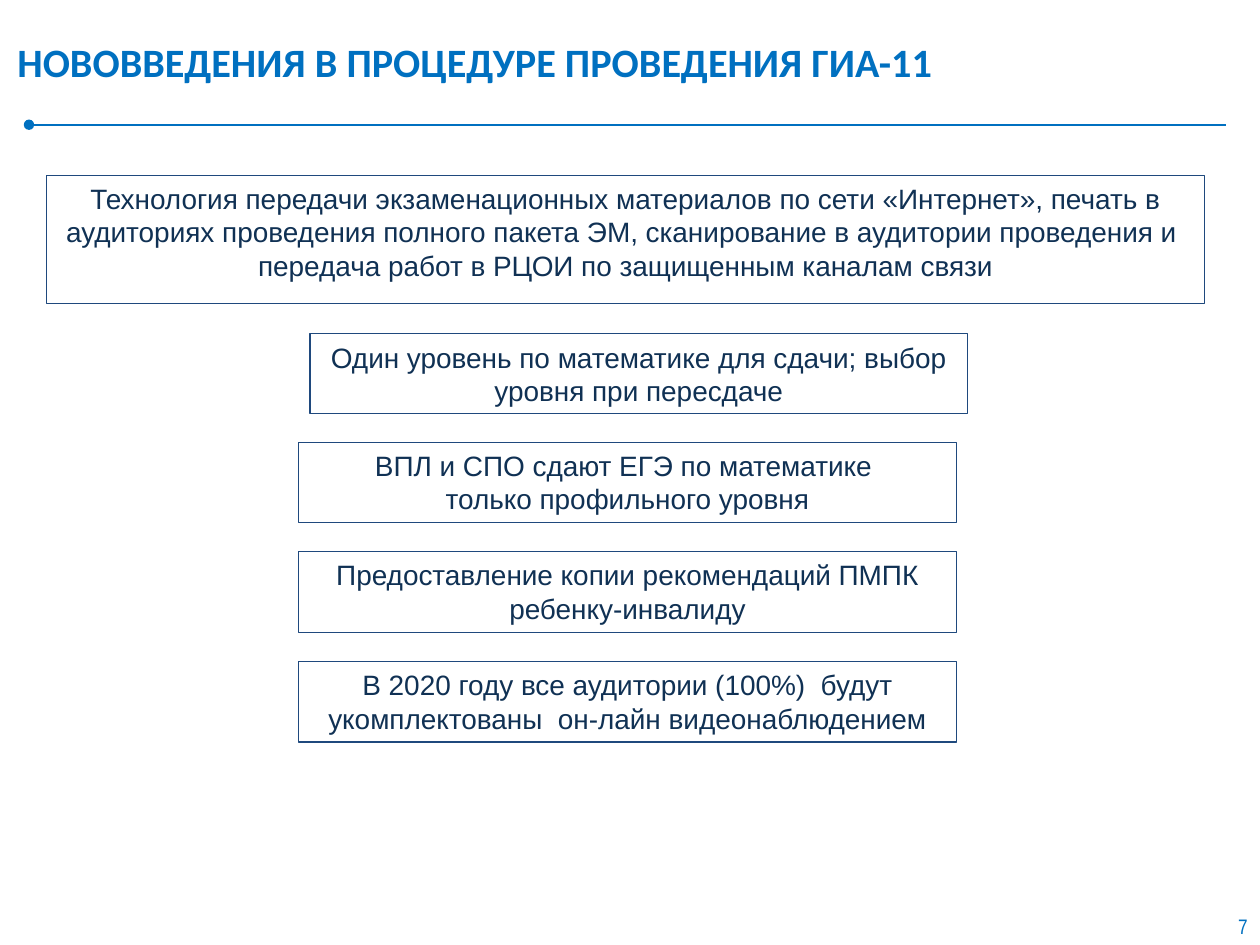
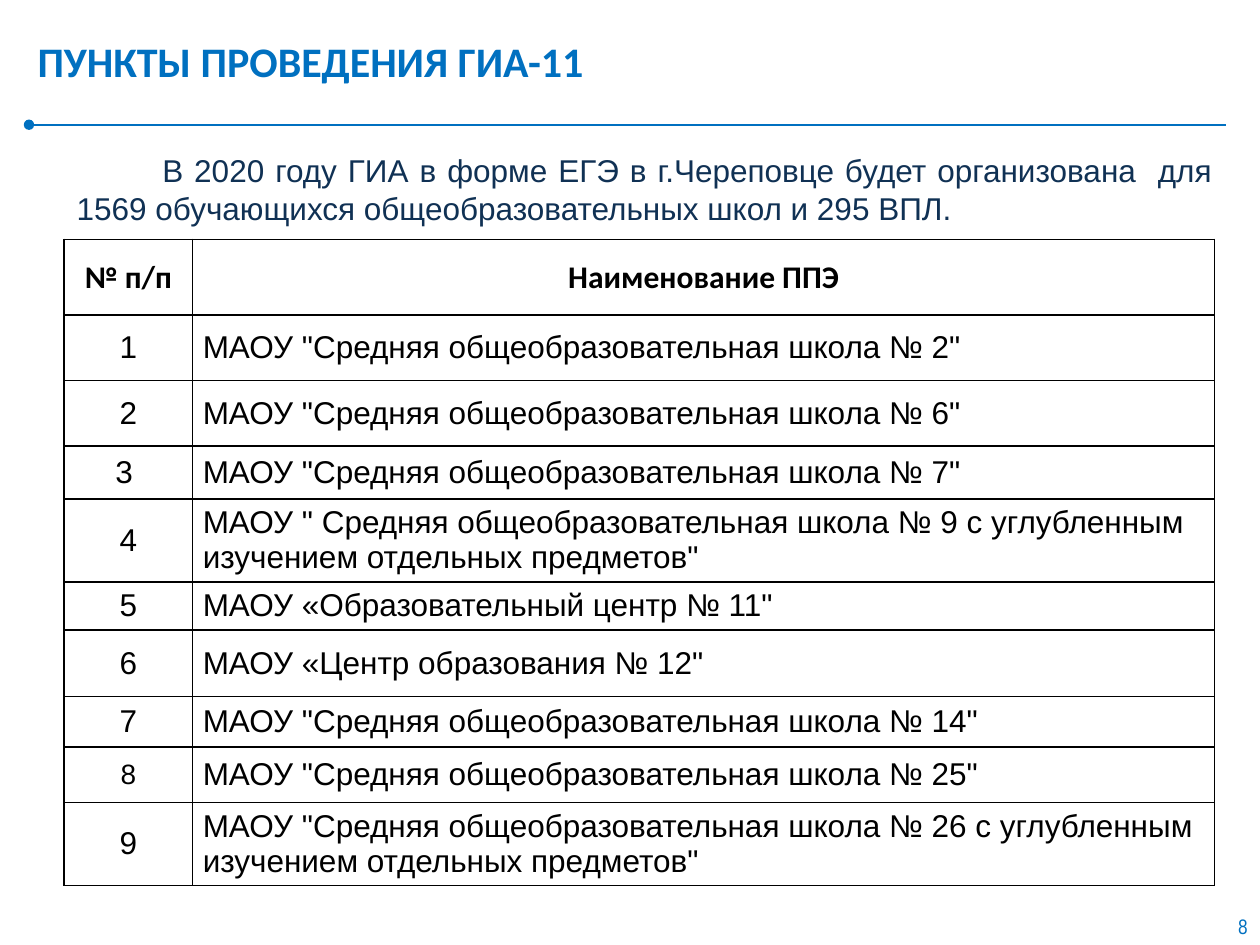
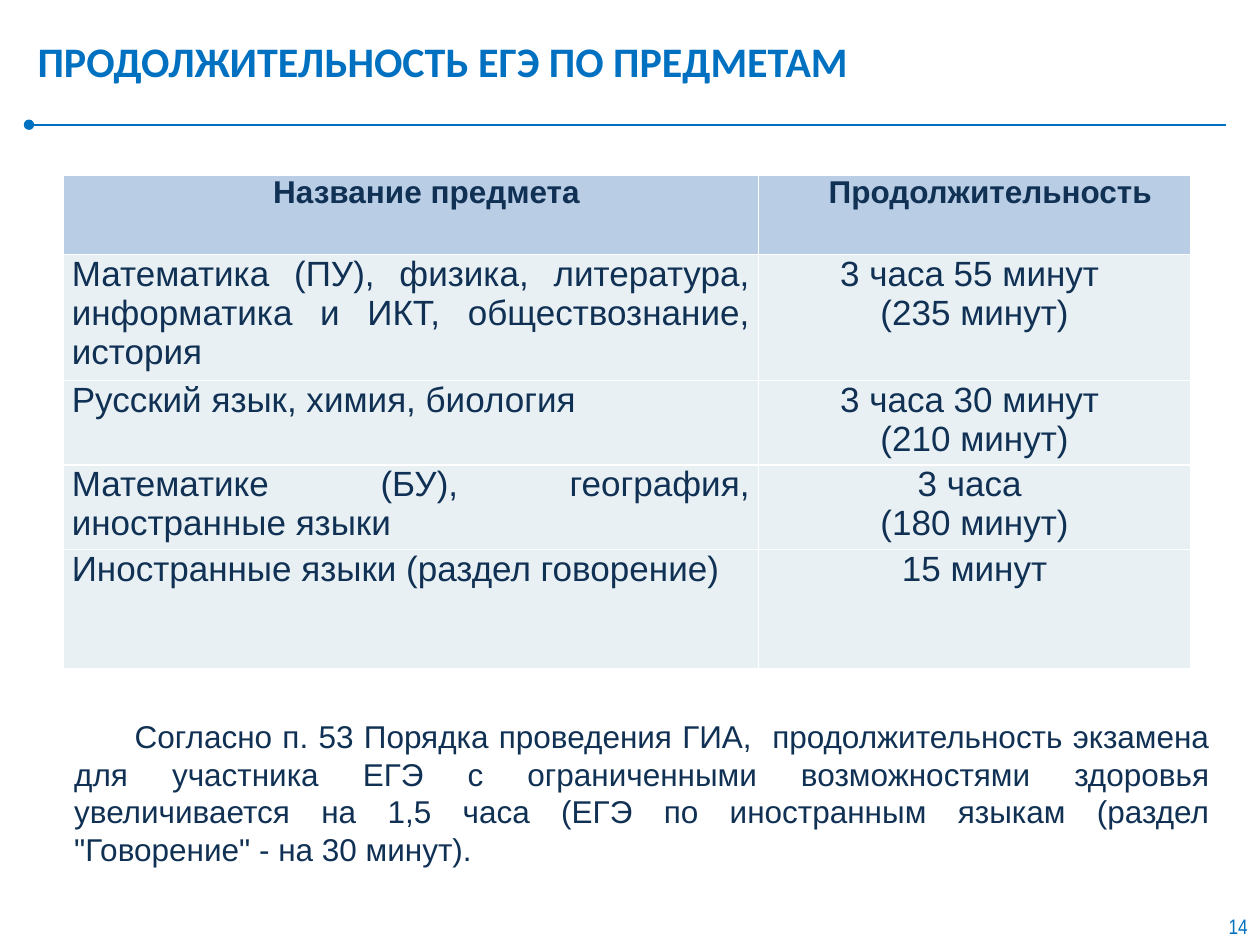
import pptx
import pptx.util
import pptx.dml.color
import pptx.enum.shapes
import pptx.enum.text
import pptx.oxml
import pptx.oxml.ns

Inches = pptx.util.Inches
Pt = pptx.util.Pt
ALIGN = pptx.enum.text.PP_ALIGN
ANCHOR = pptx.enum.text.MSO_ANCHOR
BLUE, NAVY, OUTLINE = "0070C0", "103154", "1F497D"
BLACK, WHITE, HEADER_FILL, ROW_FILL = "000000", "FFFFFF", "B9CDE5", "E8F0F4"
NS = pptx.oxml.ns.nsdecls("a")


def rgb(value):
    return pptx.dml.color.RGBColor.from_string(value)


def write(frame, text, size, color=NAVY, font="Arial", bold=False,
          align=ALIGN.LEFT, anchor=ANCHOR.TOP, left_indent=0, first_indent=0):
    frame.text = text
    frame.word_wrap = True
    frame.vertical_anchor = anchor
    for paragraph in frame.paragraphs:
        paragraph.alignment = align
        properties = paragraph._p.get_or_add_pPr()
        properties.set("marL", str(Inches(left_indent)))
        properties.set("indent", str(Inches(first_indent)))
        for run in paragraph.runs:
            run.font.name = font
            run.font.size = Pt(size)
            run.font.bold = bold
            run.font.color.rgb = rgb(color)


prs = pptx.Presentation()
prs.slide_width, prs.slide_height = Inches(10), Inches(7.5)

# Title, rule and page number on every slide
headings = [
    ("НОВОВВЕДЕНИЯ В ПРОЦЕДУРЕ ПРОВЕДЕНИЯ ГИА-11", 0.04, 9.53, 23, "7"),
    ("ПУНКТЫ ПРОВЕДЕНИЯ ГИА-11", 0.2, 9, 24, "8"),
    ("ПРОДОЛЖИТЕЛЬНОСТЬ ЕГЭ ПО ПРЕДМЕТАМ", 0.2, 9, 24, "14"),
]
for heading, left, width, size, number in headings:
    slide = prs.slides.add_slide(prs.slide_layouts[6])
    rule = slide.shapes.add_connector(
        pptx.enum.shapes.MSO_CONNECTOR.STRAIGHT,
        Inches(0.23), Inches(0.99), Inches(9.73), Inches(0.99))
    rule.line.color.rgb = rgb(BLUE)
    rule.line.width = Pt(1.25)
    rule.line._get_or_add_ln().append(
        pptx.oxml.parse_xml(f'<a:headEnd {NS} type="oval"/>'))
    rule._element.spPr.append(pptx.oxml.parse_xml(f"<a:effectLst {NS}/>"))
    title = slide.shapes.add_textbox(Inches(left), Inches(0.13), Inches(width), Inches(0.71))
    write(title.text_frame, heading, size, BLUE, "Calibri", True, anchor=ANCHOR.MIDDLE)
    page = slide.shapes.add_textbox(Inches(9.49), Inches(7.2), Inches(0.51), Inches(0.3))
    write(page.text_frame, number, 12, BLUE, "Arial Narrow", align=ALIGN.RIGHT)

changes_slide, places_slide, duration_slide = prs.slides

# Changes: one wide box above four narrow ones
changes = [
    (0.37, 1.39, 9.19, 1.02, "Технология передачи экзаменационных материалов по сети «Интернет», "
     "печать в аудиториях проведения полного пакета ЭМ, сканирование в аудитории проведения и  "
     "передача работ в РЦОИ по защищенным каналам связи"),
    (2.46, 2.65, 5.22, 0.63, "Один уровень по математике для сдачи; выбор уровня при пересдаче"),
]
lower_changes = [
    "ВПЛ и СПО сдают ЕГЭ по математике \nтолько профильного уровня",
    "Предоставление копии рекомендаций ПМПК ребенку-инвалиду",
    "В 2020 году все аудитории (100%)  будут укомплектованы  он-лайн видеонаблюдением",
]
for index, text in enumerate(lower_changes):
    changes.append((2.37, 3.51 + 0.87 * index, 5.22, 0.64, text))
for left, top, width, height, text in changes:
    change = changes_slide.shapes.add_shape(
        pptx.enum.shapes.MSO_SHAPE.RECTANGLE,
        Inches(left), Inches(top), Inches(width), Inches(height))
    change.shadow.inherit = False
    change.fill.background()
    change.line.color.rgb = rgb(OUTLINE)
    change.line.width = Pt(0.75)
    write(change.text_frame, text, 16, align=ALIGN.CENTER)

# Justified paragraphs beside the tables
notes = [
    (places_slide, 0.51, 1.15, 0.75, 0.68,
     "В 2020 году ГИА в форме ЕГЭ в г.Череповце будет организована  для "
     "1569 обучающихся общеобразовательных школ и 295 ВПЛ."),
    (duration_slide, 0.49, 5.64, 1.18, 0.48,
     "Согласно п. 53 Порядка проведения ГИА,  продолжительность экзамена для участника ЕГЭ "
     "с ограниченными возможностями здоровья увеличивается на 1,5 часа "
     "(ЕГЭ по иностранным языкам (раздел \"Говорение\" - на 30 минут). "),
]
for slide, left, top, height, indent, text in notes:
    note = slide.shapes.add_textbox(Inches(left), Inches(top), Inches(9.21), Inches(height))
    write(note.text_frame, text, 18, align=ALIGN.JUSTIFY, first_indent=indent)

# Table contents
places = [
    ("№ п/п", "Наименование ППЭ"),
    ("1", 'МАОУ "Средняя общеобразовательная школа № 2"'),
    ("2", 'МАОУ "Средняя общеобразовательная школа № 6"'),
    ("3 ", 'МАОУ "Средняя общеобразовательная школа № 7"'),
    ("4", 'МАОУ " Средняя общеобразовательная школа № 9 с углубленным изучением отдельных предметов"'),
    ("5", 'МАОУ «Образовательный центр № 11"'),
    ("6", 'МАОУ «Центр образования № 12"'),
    ("7", 'МАОУ "Средняя общеобразовательная школа № 14"'),
    ("8", 'МАОУ "Средняя общеобразовательная школа № 25"'),
    ("9", 'МАОУ "Средняя общеобразовательная школа № 26 с углубленным изучением отдельных предметов"'),
]
durations = [
    ("Название предмета", "Продолжительность"),
    ("Математика (ПУ), физика, литература, информатика и ИКТ, обществознание, история",
     "3 часа 55 минут \n(235 минут)"),
    ("Русский язык, химия, биология", "3 часа 30 минут \n(210 минут)"),
    ("Математике (БУ), география, иностранные языки", "3 часа \n(180 минут)"),
    ("Иностранные языки (раздел говорение)", "15 минут"),
]
place_heights = [0.6, 0.52, 0.52, 0.42, 0.66, 0.38, 0.53, 0.4, 0.44, 0.66]
duration_heights = [0.63, 1, 0.67, 0.67, 0.95]

# Each table: place, sizes, cell margin, colours, header font, body size, alignments
tables = [
    (places_slide, places, 0.51, 1.9, [1.02, 8.11], place_heights, 0.08, BLACK, BLACK,
     (None, None), "Calibri", 0, 18, (ALIGN.CENTER, ALIGN.LEFT), ANCHOR.MIDDLE),
    (duration_slide, durations, 0.5, 1.39, [5.52, 3.43], duration_heights, 0.07, NAVY, WHITE,
     (HEADER_FILL, ROW_FILL), "Arial", 0.25, 20, (ALIGN.JUSTIFY, ALIGN.CENTER), ANCHOR.TOP),
]
for (slide, rows, left, top, widths, heights, margin, ink, border, fills,
     header_font, header_indent, body_size, aligns, anchor) in tables:
    table = slide.shapes.add_table(
        len(rows), len(widths), Inches(left), Inches(top),
        Inches(sum(widths)), Inches(sum(heights))).table
    table.first_row = table.horz_banding = False
    for column, width in zip(table.columns, widths):
        column.width = Inches(width)
    for r, (row, height) in enumerate(zip(rows, heights)):
        table.rows[r].height = Inches(height)
        for c, text in enumerate(row):
            cell = table.cell(r, c)
            if r == 0:
                write(cell.text_frame, text, 18, ink, header_font, True,
                      ALIGN.CENTER, left_indent=header_indent)
            else:
                size = 16 if text == "8" else body_size
                write(cell.text_frame, text, size, ink, align=aligns[c])
            cell.vertical_anchor = anchor
            cell.margin_left = cell.margin_right = Inches(margin)
            cell.margin_top = cell.margin_bottom = 0
            cell_properties = cell._tc.get_or_add_tcPr()
            for side in ("lnL", "lnR", "lnT", "lnB"):
                cell_properties.append(pptx.oxml.parse_xml(
                    f'<a:{side} {NS} w="{Pt(1)}"><a:solidFill>'
                    f'<a:srgbClr val="{border}"/></a:solidFill></a:{side}>'))
            fill = fills[min(r, 1)]
            if fill:
                cell.fill.solid()
                cell.fill.fore_color.rgb = rgb(fill)
            else:
                cell.fill.background()

prs.save("out.pptx")
